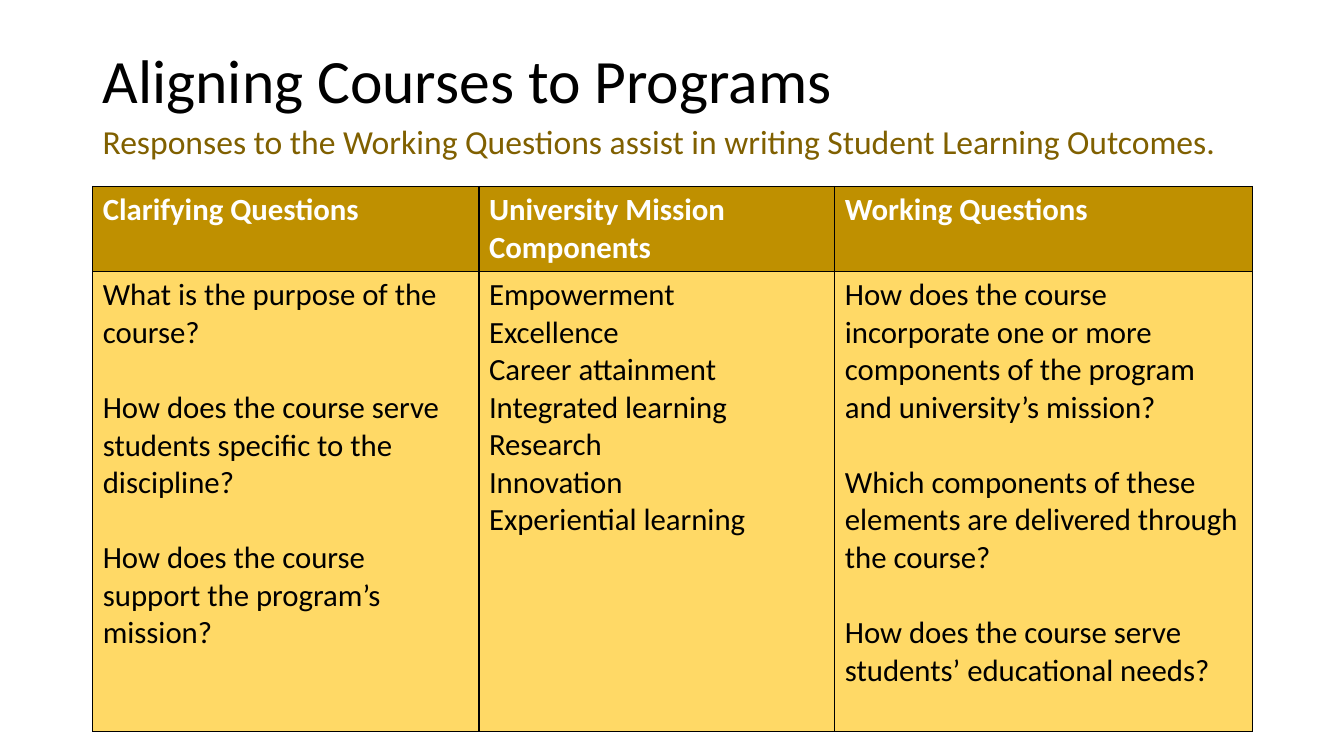
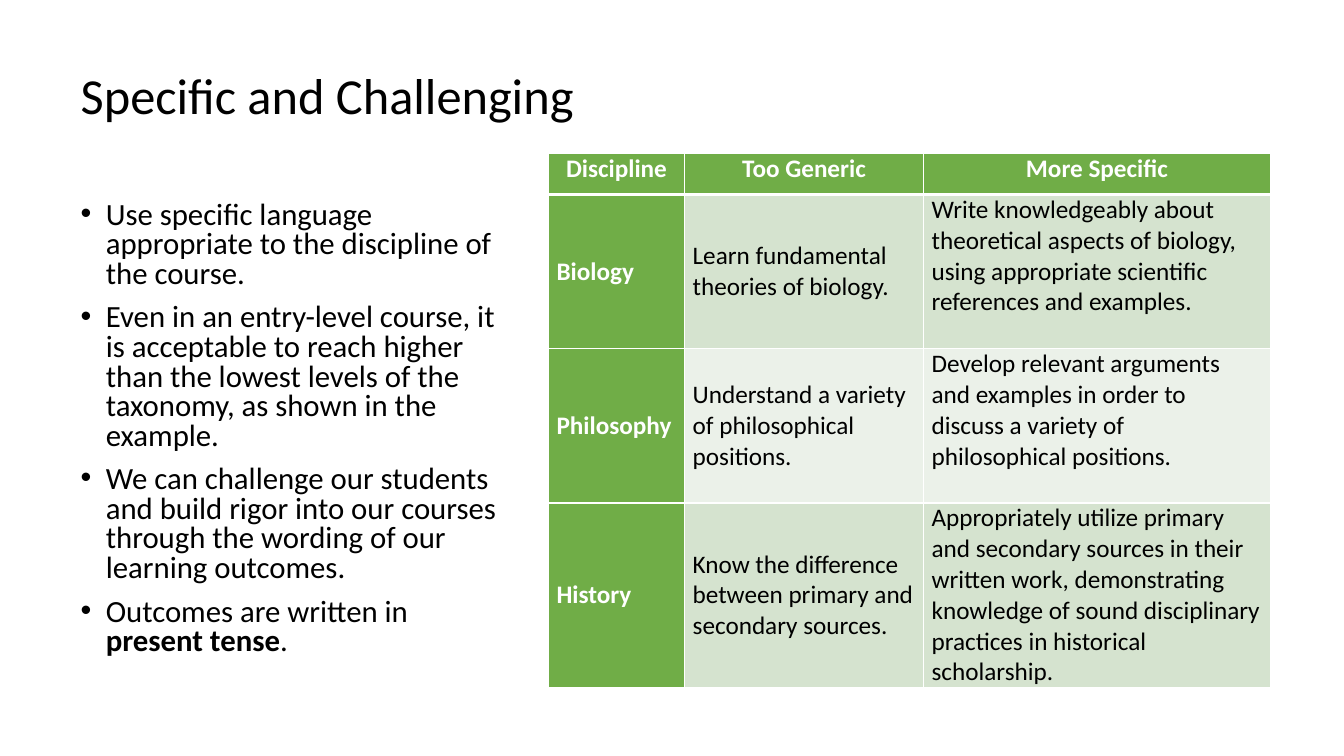
"""Build two slides on aligning courses and writing specific learning outcomes."""
import pptx
import pptx.dml.color
import pptx.enum.text
import pptx.oxml
import pptx.util
import lxml.etree

Inches = pptx.util.Inches
Pt = pptx.util.Pt
ALIGN = pptx.enum.text.PP_ALIGN
ANCHOR = pptx.enum.text.MSO_ANCHOR
FONT = "Calibri"
COLORS = {
    "black": "000000",
    "white": "FFFFFF",
    "gold": "BF9000",
    "light gold": "FFD966",
    "dark gold": "806000",
    "green": "70AD47",
    "light green": "D5E3CF",
    "pale green": "EBF1E9",
}


def write_text(frame, paragraphs, size, color="black", bold=False, align=ALIGN.LEFT,
               anchor=ANCHOR.TOP, line_spacing=None, gap=0, indent=None):
    """Fill a text frame; text between double asterisks is bold."""
    frame.word_wrap = True
    frame.auto_size = pptx.enum.text.MSO_AUTO_SIZE.NONE
    frame.vertical_anchor = anchor
    for index, text in enumerate(paragraphs):
        paragraph = frame.paragraphs[0] if index == 0 else frame.add_paragraph()
        paragraph.alignment = align
        paragraph.space_before = Pt(gap if index else 0)
        if line_spacing:
            paragraph.line_spacing = line_spacing
        if indent:
            properties = paragraph._p.get_or_add_pPr()
            properties.set("marL", str(Inches(indent)))
            properties.set("indent", str(-Inches(indent)))
        for part, run_text in enumerate(text.split("**")):
            run = paragraph.add_run()
            run.text = run_text
            run.font.name = FONT
            run.font.size = Pt(size)
            run.font.bold = bold or part % 2 == 1
            run.font.color.rgb = pptx.dml.color.RGBColor.from_string(COLORS[color])


def style_cell(cell, fill, border, top=1, bottom=1):
    """Set the fill of a cell and its border widths in points."""
    properties = cell._tc.get_or_add_tcPr()
    for tag, width in (("lnL", 1), ("lnR", 1), ("lnT", top), ("lnB", bottom)):
        line = lxml.etree.SubElement(properties, pptx.oxml.ns.qn(f"a:{tag}"), w=str(Pt(width)))
        solid = lxml.etree.SubElement(line, pptx.oxml.ns.qn("a:solidFill"))
        lxml.etree.SubElement(solid, pptx.oxml.ns.qn("a:srgbClr"), val=COLORS[border])
    cell.fill.solid()
    cell.fill.fore_color.rgb = pptx.dml.color.RGBColor.from_string(COLORS[fill])


presentation = pptx.Presentation()
presentation.slide_width = Inches(13.33)
presentation.slide_height = Inches(7.5)

slides = []
tables = []
for layout, title, title_size, title_box, table_corner, widths, heights in (
    (5, "Aligning Courses to Programs", 44, (0.92, 0.4, 11.5, 0.85),
     (0.92, 1.85), (3.83, 3.53, 4.14), (0.84, 4.56)),
    (1, "Specific and Challenging", 36, (0.7, 0.35, 11.93, 1.24),
     (5.44, 1.52), (1.35, 2.37, 3.44), (0.41, 1.53, 1.53, 1.83)),
):
    slide = presentation.slides.add_slide(presentation.slide_layouts[layout])
    heading = slide.shapes.title
    heading.left, heading.top, heading.width, heading.height = map(Inches, title_box)
    write_text(heading.text_frame, [title], title_size, anchor=ANCHOR.MIDDLE, line_spacing=0.9)
    table = slide.shapes.add_table(
        len(heights), len(widths), *map(Inches, table_corner),
        Inches(sum(widths)), Inches(sum(heights))).table
    table.first_row = table.horz_banding = False
    for column, width in zip(table.columns, widths):
        column.width = Inches(width)
    for row, height in zip(table.rows, heights):
        row.height = Inches(height)
    slides.append(slide)
    tables.append(table)

subtitle = slides[0].shapes.add_textbox(Inches(0.92), Inches(1.15), Inches(11.5), Inches(0.5))
write_text(subtitle.text_frame,
           ["Responses to the Working Questions assist in writing Student Learning Outcomes."],
           24, color="dark gold")

question_columns = [
    ("Clarifying Questions", 27, [
        "What is the purpose of the course?",
        "How does the course serve students specific to the discipline?",
        "How does the course support the program’s mission?"]),
    ("University Mission Components", 0, [
        "Empowerment", "Excellence", "Career attainment", "Integrated learning",
        "Research", "Innovation", "Experiential learning"]),
    ("Working Questions", 27, [
        "How does the course incorporate one or more components of the program "
        "and university’s mission?",
        "Which components of these elements are delivered through the course?",
        "How does the course serve students’ educational needs?"]),
]
for column_index, (header, gap, entries) in enumerate(question_columns):
    header_cell = tables[0].cell(0, column_index)
    style_cell(header_cell, "gold", "black")
    write_text(header_cell.text_frame, [header], 22, color="white", bold=True)
    entries_cell = tables[0].cell(1, column_index)
    style_cell(entries_cell, "light gold", "black")
    write_text(entries_cell.text_frame, entries, 22, gap=gap)

advice = slides[1].placeholders[1]
advice.left, advice.top, advice.width, advice.height = map(Inches, (0.7, 1.95, 4.38, 4.81))
write_text(advice.text_frame, [
    "Use specific language appropriate to the discipline of the course.",
    "Even in an entry-level course, it is acceptable to reach higher than the lowest "
    "levels of the taxonomy, as shown in the example.",
    "We can challenge our students and build rigor into our courses through the wording "
    "of our learning outcomes.",
    "Outcomes are written in **present tense**.",
], 22, line_spacing=0.8, gap=10, indent=0.25)

outcome_rows = [
    ("Discipline", "Too Generic", "More Specific"),
    ("Biology", "Learn fundamental theories of biology.",
     "Write knowledgeably about theoretical aspects of biology, using appropriate "
     "scientific references and examples."),
    ("Philosophy", "Understand a variety of philosophical positions.",
     "Develop relevant arguments and examples in order to discuss a variety of "
     "philosophical positions."),
    ("History", "Know the difference between primary and secondary sources.",
     "Appropriately utilize primary and secondary sources in their written work, "
     "demonstrating knowledge of sound disciplinary practices in historical scholarship."),
]
for row_index, outcomes in enumerate(outcome_rows):
    for column_index, text in enumerate(outcomes):
        cell = tables[1].cell(row_index, column_index)
        is_header = row_index == 0
        is_label = is_header or column_index == 0
        band = "light green" if row_index % 2 else "pale green"
        style_cell(cell, "green" if is_label else band, "white",
                   top=3 if row_index == 1 else 1, bottom=3 if is_header else 1)
        cell.margin_left = cell.margin_right = Inches(0.08)
        cell.margin_top = cell.margin_bottom = 0
        write_text(cell.text_frame, [text], 18,
                   color="white" if is_label else "black", bold=is_label,
                   align=ALIGN.CENTER if is_header else ALIGN.LEFT)
        cell.vertical_anchor = ANCHOR.TOP if is_header or column_index == 2 else ANCHOR.MIDDLE

presentation.save("out.pptx")
